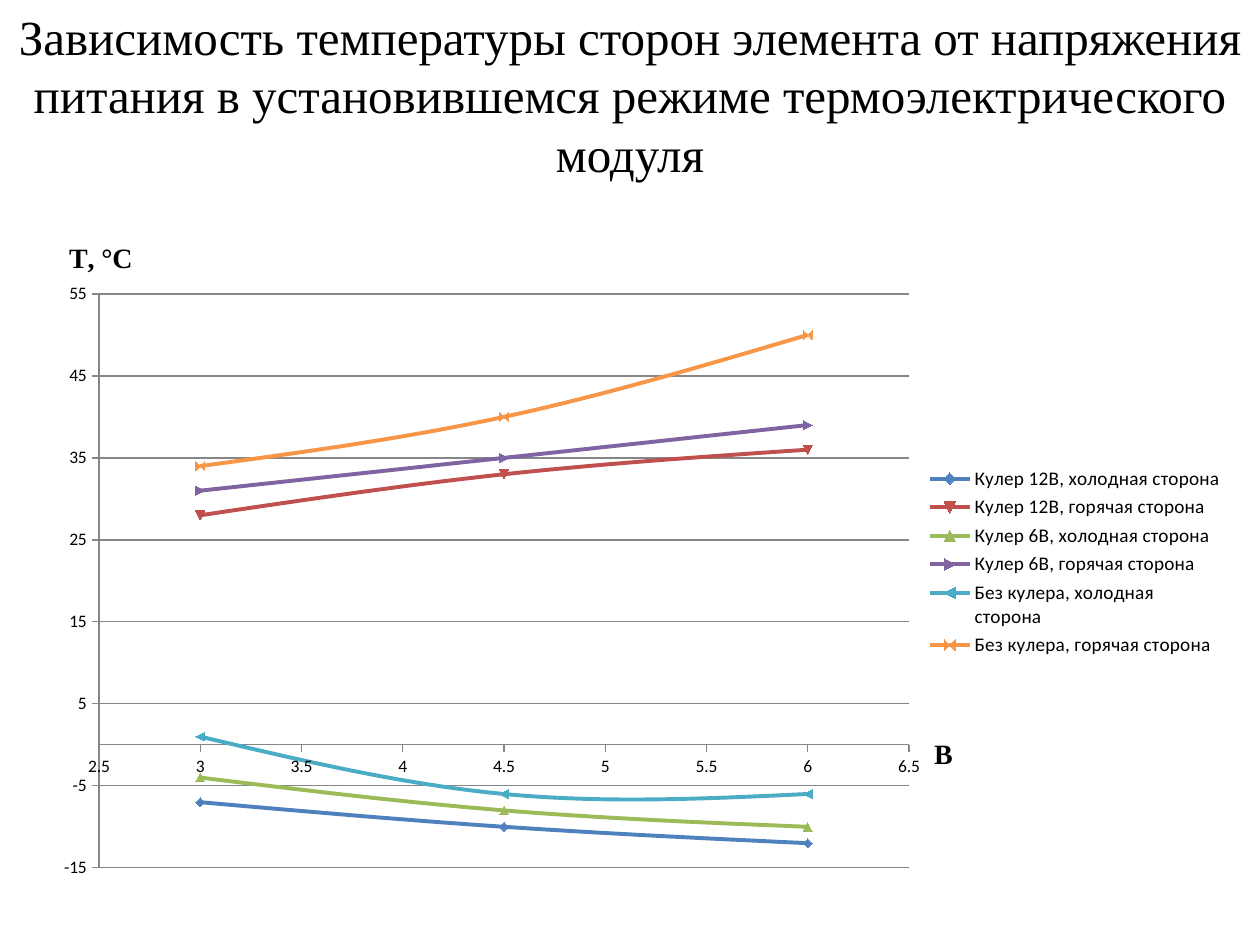
from pptx import Presentation
from pptx.chart.data import XyChartData
from pptx.dml.color import RGBColor
from pptx.enum.chart import XL_CHART_TYPE, XL_LEGEND_POSITION, XL_TICK_LABEL_POSITION, XL_TICK_MARK
from pptx.enum.text import MSO_ANCHOR, MSO_AUTO_SIZE, PP_ALIGN
from pptx.oxml.ns import qn
from pptx.util import Emu, Pt
from lxml.etree import SubElement

PX = 914400 / 126
CHART_WIDTH, CHART_HEIGHT = 1201, 648
COLORS = {
    "text": "000000", "axis": "868686",
    "fan_12_cold": "4F81BD", "fan_12_hot": "C0504D",
    "fan_6_cold": "9BBB59", "fan_6_hot": "8064A2",
    "no_fan_cold": "4BACC6", "no_fan_hot": "F79646",
}
VOLTAGES = [6, 4.5, 3]
TEMPERATURES = [
    ("Кулер 12В, холодная сторона", "fan_12_cold", [-12, -10, -7]),
    ("Кулер 12В, горячая сторона", "fan_12_hot", [36, 33, 28]),
    ("Кулер 6В, холодная сторона", "fan_6_cold", [-10, -8, -4]),
    ("Кулер 6В, горячая сторона", "fan_6_hot", [39, 35, 31]),
    ("Без кулера, холодная сторона", "no_fan_cold", [-6, -6, 1]),
    ("Без кулера, горячая сторона", "no_fan_hot", [50, 40, 34]),
]


def px(*lengths):
    return [Emu(round(length * PX)) for length in lengths]


def set_values(target, values):
    for name, value in values.items():
        setattr(target, name, value)


def set_font(font, size, name="Calibri", bold=False):
    set_values(font, {"size": Pt(size), "name": name, "bold": bold})
    font.color.rgb = RGBColor.from_string(COLORS["text"])


def set_line(line, color, width):
    line.color.rgb = RGBColor.from_string(COLORS[color])
    line.width = Pt(width)


def place(element, index, inner=False, **box):
    """Set a manual layout from a box in px inside the chart."""
    for old in element.findall(qn("c:layout")):
        element.remove(old)
    layout = SubElement(element, qn("c:layout"))
    element.insert(index, layout)
    manual = SubElement(layout, qn("c:manualLayout"))
    values = {"layoutTarget": "inner"} if inner else {}
    values.update(xMode="edge", yMode="edge")
    for side, length in box.items():
        values[side] = length / (CHART_WIDTH if side in "xw" else CHART_HEIGHT)
    for tag, value in values.items():
        SubElement(manual, qn(f"c:{tag}")).set("val", str(value))


def add_title(slide, text):
    shape = slide.shapes.add_textbox(*px(0, 0, 1260, 190))
    frame = shape.text_frame
    set_values(frame, {"word_wrap": True, "vertical_anchor": MSO_ANCHOR.TOP,
                       "auto_size": MSO_AUTO_SIZE.SHAPE_TO_FIT_TEXT})
    paragraph = frame.paragraphs[0]
    paragraph.alignment = PP_ALIGN.CENTER
    run = paragraph.add_run()
    run.text = text
    set_font(run.font, 28, "Times New Roman")


def format_axis(axis, title, x, y, values):
    set_values(axis, {"major_tick_mark": XL_TICK_MARK.OUTSIDE,
                      "minor_tick_mark": XL_TICK_MARK.NONE,
                      "tick_label_position": XL_TICK_LABEL_POSITION.NEXT_TO_AXIS, **values})
    set_font(axis.tick_labels.font, 10)
    set_values(axis.tick_labels, {"number_format": "General", "number_format_is_linked": False})
    set_line(axis.format.line, "axis", 0.75)
    frame = axis.axis_title.text_frame
    run = frame.paragraphs[0].add_run()
    run.text = title
    set_font(run.font, 16, "Times New Roman", True)
    # Keep the title horizontal
    element = axis.axis_title._element
    body = element.find(".//" + qn("a:bodyPr"))
    body.set("rot", "0")
    body.set("vert", "horz")
    place(element, 1, x=x, y=y)


def add_temperature_chart(slide):
    data = XyChartData()
    for name, _, temperatures in TEMPERATURES:
        series = data.add_series(name)
        for voltage, temperature in zip(VOLTAGES, temperatures):
            series.add_data_point(voltage, temperature)
    chart = slide.shapes.add_chart(
        XL_CHART_TYPE.XY_SCATTER_SMOOTH, *px(35, 234, CHART_WIDTH, CHART_HEIGHT), data).chart
    chart.has_title = False
    set_font(chart.font, 10)

    # Curves
    for series, (_, color, _) in zip(chart.plots[0].series, TEMPERATURES):
        series._element.get_or_add_smooth().val = True
        set_line(series.format.line, color, 2.25)
        series.marker.size = 5
        series.marker.format.fill.solid()
        series.marker.format.fill.fore_color.rgb = RGBColor.from_string(COLORS[color])
        set_line(series.marker.format.line, color, 0.75)

    # Axes
    format_axis(chart.category_axis, "В", 894, 497, {
        "minimum_scale": 2.5, "maximum_scale": 6.5, "major_unit": 0.5,
        "has_major_gridlines": False})
    format_axis(chart.value_axis, "T, °C", 29, 1, {
        "minimum_scale": -15, "maximum_scale": 55, "major_unit": 10,
        "has_major_gridlines": True})
    set_line(chart.value_axis.major_gridlines.format.line, "axis", 0.75)

    # Legend and plot area
    chart.has_legend = True
    set_values(chart.legend, {"position": XL_LEGEND_POSITION.RIGHT, "include_in_layout": False})
    set_font(chart.legend.font, 11)
    place(chart.legend._element, 1, x=894, y=228, w=292, h=200)
    plot_area = chart._chartSpace.find(".//" + qn("c:plotArea"))
    place(plot_area, 0, inner=True, x=64, y=60, w=810, h=574)


def main():
    presentation = Presentation()
    width, height = px(1260, 945)
    set_values(presentation, {"slide_width": width, "slide_height": height})
    slide = presentation.slides.add_slide(presentation.slide_layouts[6])
    add_title(slide, "Зависимость температуры сторон элемента от напряжения питания "
                     "в установившемся режиме термоэлектрического модуля")
    add_temperature_chart(slide)
    presentation.save("out.pptx")


if __name__ == "__main__":
    main()
